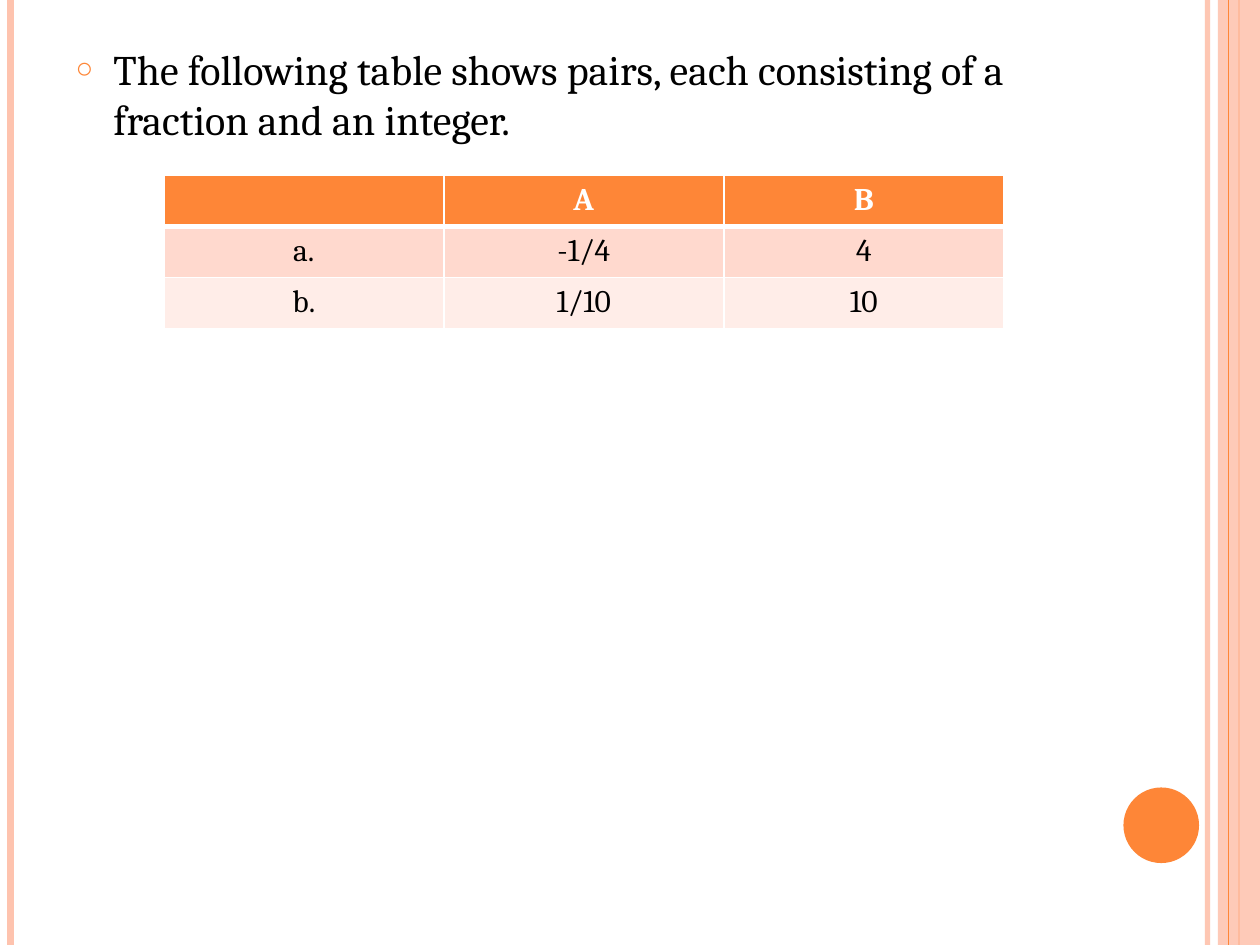
from lxml.etree import SubElement
from pptx import Presentation
from pptx.dml.color import RGBColor
from pptx.enum.shapes import MSO_CONNECTOR as Connector, MSO_SHAPE as Shape
from pptx.enum.text import MSO_ANCHOR as Anchor, MSO_AUTO_SIZE as AutoSize, PP_ALIGN as Align
from pptx.oxml.ns import qn
from pptx.util import Pt

WIDTH, HEIGHT = 720, 540
WHITE = RGBColor(0xFF, 0xFF, 0xFF)
BLACK = RGBColor(0x00, 0x00, 0x00)
ORANGE = RGBColor(0xFE, 0x86, 0x37)
PEACH = RGBColor(0xFE, 0xC3, 0xAE)
DARK_BAND = RGBColor(0xFF, 0xD9, 0xCE)
LIGHT_BAND = RGBColor(0xFF, 0xED, 0xE8)

STATEMENT = "The following table shows pairs, each consisting of a fraction and an integer."
PAIRS = [["", "A", "B"], ["a.", "-1/4", "4"], ["b.", "1/10", "10"]]


def apply_format(target, values):
    for name, value in values.items():
        setattr(target, name, value)


def add_color(parent, color, opacity=100):
    tint = SubElement(parent, qn("a:srgbClr"), val=str(color))
    if opacity < 100:
        SubElement(tint, qn("a:alpha"), val=str(opacity * 1000))


class SlideBuilder:
    font_name = "Cambria"

    def __init__(self, slide):
        self.slide = slide

    def style_font(self, font, size, color, bold=False):
        apply_format(font, {"name": self.font_name, "size": Pt(size), "bold": bold})
        font.color.rgb = color

    def set_opacity(self, fill_element, color, opacity):
        fill_element.remove(fill_element[0])
        add_color(fill_element, color, opacity)

    def stripe(self, x, width, color, opacity=100):
        stripe = self.slide.shapes.add_connector(
            Connector.STRAIGHT, Pt(x), Pt(0), Pt(x), Pt(HEIGHT))
        stripe.line.width = Pt(width)
        stripe.line.color.rgb = color
        properties = stripe._element.spPr
        self.set_opacity(properties.find(".//" + qn("a:solidFill")), color, opacity)
        SubElement(properties, qn("a:effectLst"))

    def panel(self, kind, box, color, opacity=100):
        panel = self.slide.shapes.add_shape(kind, *map(Pt, box))
        panel.shadow.inherit = False
        panel.fill.solid()
        panel.fill.fore_color.rgb = color
        panel.line.fill.background()
        self.set_opacity(panel._element.spPr.find(qn("a:solidFill")), color, opacity)

    def bullet_list(self, items, box, size, indent):
        body = self.slide.placeholders[1]
        apply_format(body, dict(zip(("left", "top", "width", "height"), map(Pt, box))))
        frame = body.text_frame
        frame.text = "\n".join(items)
        apply_format(frame, {"word_wrap": True, "auto_size": AutoSize.NONE,
                             "vertical_anchor": Anchor.TOP})
        for paragraph in frame.paragraphs:
            apply_format(paragraph, {"space_before": Pt(6), "alignment": Align.LEFT})
            self.style_font(paragraph.runs[0].font, size, BLACK)
            properties = paragraph._p.get_or_add_pPr()
            properties.set("marL", str(Pt(indent)))
            properties.set("indent", str(-Pt(indent)))
            add_color(SubElement(properties, qn("a:buClr")), ORANGE)
            SubElement(properties, qn("a:buSzPct"), val="70000")
            SubElement(properties, qn("a:buChar"), char="○")

    def border(self, cell, side, width):
        edge = SubElement(cell._tc.get_or_add_tcPr(), qn(f"a:ln{side}"), w=str(Pt(width)))
        add_color(SubElement(edge, qn("a:solidFill")), WHITE)

    def table(self, rows, box, size):
        table = self.slide.shapes.add_table(len(rows), len(rows[0]), *map(Pt, box)).table
        for row, texts in enumerate(rows):
            header = row == 0
            band = ORANGE if header else (LIGHT_BAND, DARK_BAND)[row % 2]
            for column, text in enumerate(texts):
                cell = table.cell(row, column)
                cell.text = text
                paragraph = cell.text_frame.paragraphs[0]
                paragraph.alignment = Align.CENTER
                self.style_font(paragraph.font, size, WHITE if header else BLACK, header)
                for run in paragraph.runs:
                    self.style_font(run.font, size, WHITE if header else BLACK, header)
                widths = {"L": 1, "R": 1, "T": 3 if row == 1 else 1, "B": 3 if header else 1}
                for side, width in widths.items():
                    self.border(cell, side, width)
                cell.fill.solid()
                cell.fill.fore_color.rgb = band


def main():
    deck = Presentation()
    apply_format(deck, {"slide_width": Pt(WIDTH), "slide_height": Pt(HEIGHT)})
    slide = deck.slides.add_slide(deck.slide_layouts[1])
    heading = slide.shapes.title._element
    heading.getparent().remove(heading)

    builder = SlideBuilder(slide)
    builder.stripe(690, 3, PEACH, 93)
    builder.stripe(6, 4.5, PEACH)
    builder.stripe(708, 1.5, ORANGE)
    builder.panel(Shape.RECTANGLE, (696, 0, 24, HEIGHT), PEACH, 87)
    builder.stripe(702, 0.75, ORANGE)
    builder.panel(Shape.OVAL, (642, 450, 43.2, 43.2), ORANGE)
    builder.bullet_list([STATEMENT], (36, 21, 588, 68), 24, 21.6)
    builder.table(PAIRS, (93.6, 100.2, 480, 87.6), 18)
    deck.save("out.pptx")


if __name__ == "__main__":
    main()
